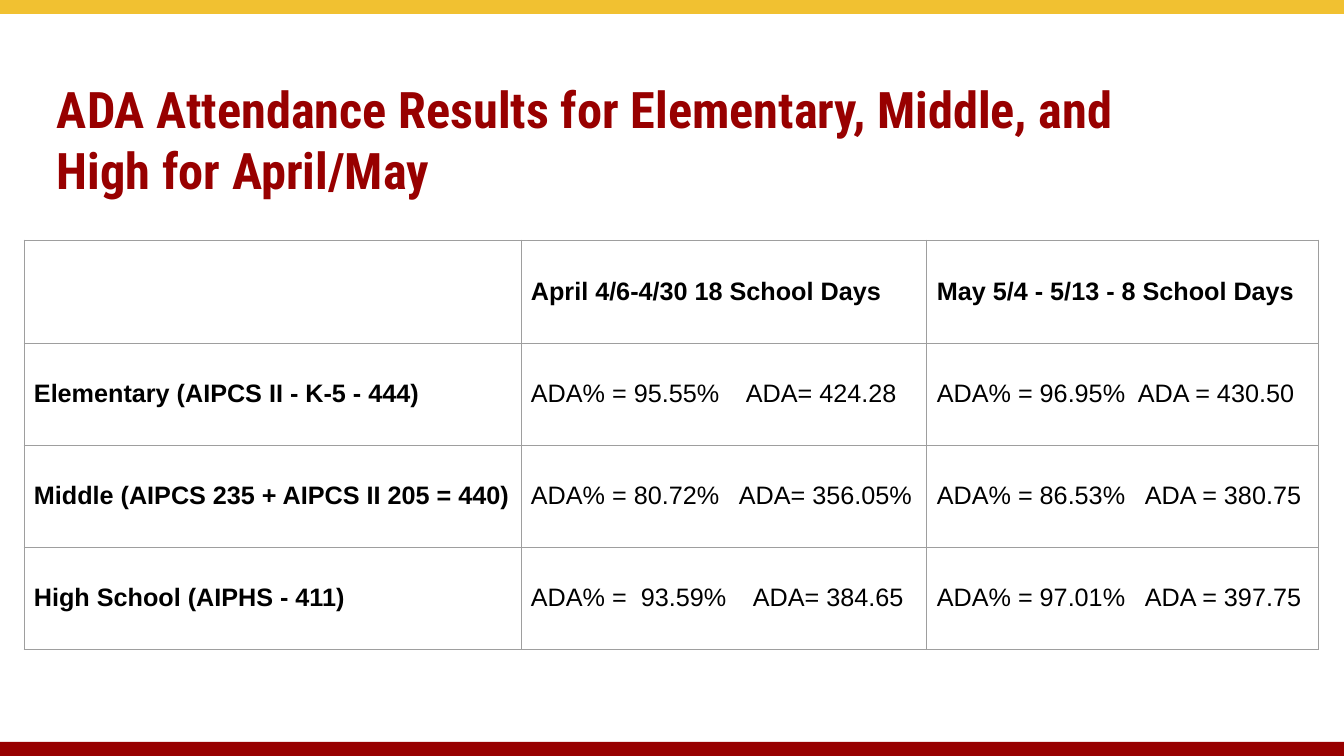
from dataclasses import dataclass

from lxml.etree import SubElement
from pptx import Presentation
from pptx.dml.color import RGBColor
from pptx.enum.shapes import MSO_SHAPE
from pptx.enum.text import MSO_ANCHOR
from pptx.oxml import parse_xml
from pptx.oxml.ns import nsdecls, qn
from pptx.util import Pt

EMU_PER_PX = 914400 / 100.8
SLIDE_W, SLIDE_H = 1344, 756
BAR_H = 14
CELL_INSET = 10


@dataclass(frozen=True)
class Theme:
    gold: str = "F1C131"
    maroon: str = "980000"
    ink: str = "000000"
    grid: str = "9E9E9E"
    title_font: str = "Roboto Condensed"
    body_font: str = "Arial"
    title_size: int = 36
    body_size: int = 18
    title_leading: float = 43.6
    grid_width: float = 0.75


def px(length):
    return round(length * EMU_PER_PX)


def write(frame, text, *, font, size, color, bold=False, leading=None, tab=None):
    """Fill a text frame's first paragraph; tab is a left tab stop in px."""
    paragraph = frame.paragraphs[0]
    if leading:
        paragraph.line_spacing = Pt(leading)
    if tab:
        stops = SubElement(paragraph._p.get_or_add_pPr(), qn("a:tabLst"))
        SubElement(stops, qn("a:tab"), pos=str(px(tab)), algn="l")
    run = paragraph.add_run()
    run.text = text
    run.font.name = font
    run.font.size = Pt(size)
    run.font.bold = bold
    run.font.color.rgb = RGBColor.from_string(color)


class SlideBuilder:
    def __init__(self, slide, theme):
        self.shapes = slide.shapes
        self.theme = theme

    def bar(self, top, color):
        bar = self.shapes.add_shape(
            MSO_SHAPE.RECTANGLE, 0, px(top), px(SLIDE_W), px(BAR_H))
        bar.shadow.inherit = False
        bar.fill.solid()
        bar.fill.fore_color.rgb = RGBColor.from_string(color)
        bar.line.fill.background()

    def title(self, text, left, top, width, height):
        box = self.shapes.add_textbox(px(left), px(top), px(width), px(height))
        frame = box.text_frame
        frame.word_wrap = True
        frame.margin_left = frame.margin_right = frame.margin_bottom = 0
        frame.margin_top = px(4)
        write(frame, text, font=self.theme.title_font, size=self.theme.title_size,
              color=self.theme.maroon, bold=True, leading=self.theme.title_leading)

    def table(self, rows, left, top, widths, heights):
        """Draw a grid whose cells are strings, or (text, tab stop) pairs."""
        table = self.shapes.add_table(
            len(heights), len(widths), px(left), px(top),
            px(sum(widths)), px(sum(heights))).table
        table.first_row = table.horz_banding = False
        for column, width in zip(table.columns, widths):
            column.width = px(width)
        for row, height in zip(table.rows, heights):
            row.height = px(height)
        for r, row in enumerate(rows):
            for c, content in enumerate(row):
                text, tab = content if isinstance(content, tuple) else (content, None)
                self.cell(table.cell(r, c), text, tab, bold=r == 0 or c == 0)

    def cell(self, cell, text, tab, bold):
        cell.fill.background()
        cell.vertical_anchor = MSO_ANCHOR.MIDDLE
        cell.margin_left = cell.margin_right = px(CELL_INSET)
        cell.margin_top = cell.margin_bottom = px(CELL_INSET)
        properties = cell._tc.get_or_add_tcPr()
        for position, side in enumerate("LRTB"):
            properties.insert(position, parse_xml(
                f'<a:ln{side} {nsdecls("a")} w="{Pt(self.theme.grid_width)}">'
                f'<a:solidFill><a:srgbClr val="{self.theme.grid}"/></a:solidFill>'
                f'</a:ln{side}>'))
        if text:
            write(cell.text_frame, text, font=self.theme.body_font,
                  size=self.theme.body_size, color=self.theme.ink, bold=bold, tab=tab)


ATTENDANCE = [
    ["", "April 4/6-4/30 18 School Days", "May 5/4 - 5/13 - 8 School Days"],
    ["Elementary (AIPCS II - K-5 - 444)",
     ("ADA% = 95.55%\tADA= 424.28", 215), ("ADA% = 96.95%\tADA = 430.50", 201)],
    ["Middle (AIPCS 235 + AIPCS II 205 = 440)",
     ("ADA% = 80.72%\tADA= 356.05%", 208), ("ADA% = 86.53%\tADA = 380.75", 208)],
    ["High School (AIPHS - 411)",
     ("ADA% =  93.59%\tADA= 384.65", 222), ("ADA% = 97.01%\tADA = 397.75", 208)],
]


def main():
    presentation = Presentation()
    presentation.slide_width = px(SLIDE_W)
    presentation.slide_height = px(SLIDE_H)
    theme = Theme()
    slide = presentation.slides.add_slide(presentation.slide_layouts[6])
    builder = SlideBuilder(slide, theme)
    builder.bar(0, theme.gold)
    builder.bar(SLIDE_H - BAR_H, theme.maroon)
    builder.title(
        "ADA Attendance Results for Elementary, Middle, and High for April/May",
        57, 74, 1127, 130)
    builder.table(ATTENDANCE, 24, 240, [497, 406, 392], [103, 102, 102, 102])
    presentation.save("out.pptx")


if __name__ == "__main__":
    main()
